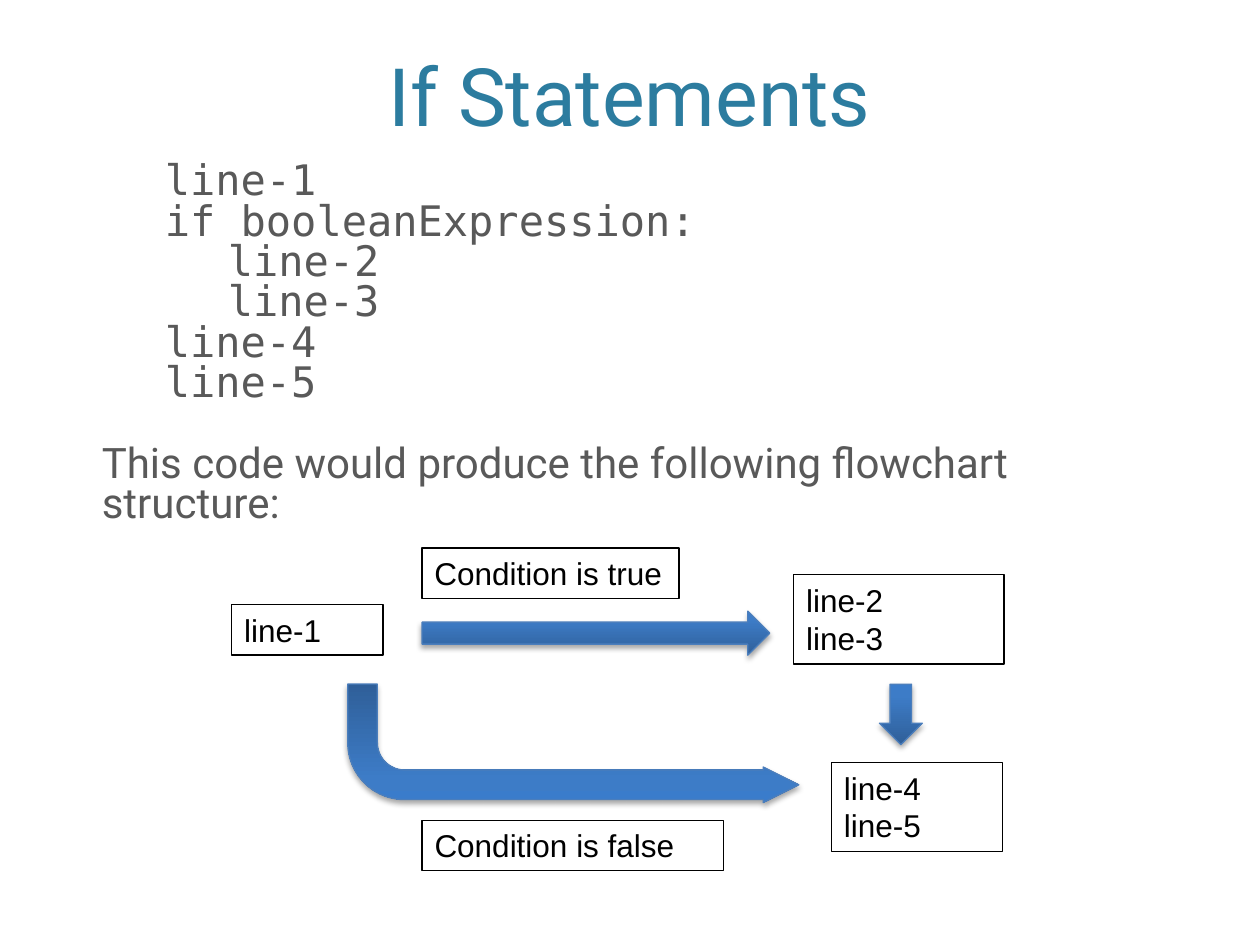
from dataclasses import dataclass

from lxml.etree import SubElement
from pptx import Presentation
from pptx.dml.color import RGBColor
from pptx.enum.shapes import MSO_SHAPE as Preset
from pptx.enum.text import MSO_ANCHOR as Anchor, MSO_AUTO_SIZE as AutoSize, PP_ALIGN as Align
from pptx.oxml import parse_xml
from pptx.oxml.ns import nsdecls, qn
from pptx.util import Inches, Pt

# Grid: 100 columns by 75 rows over the slide
WIDTH, HEIGHT = Inches(10), Inches(7.5)
COLUMN, ROW = WIDTH / 100, HEIGHT / 75

TEAL = RGBColor(0x2C, 0x7C, 0x9F)
GREY = RGBColor(0x59, 0x59, 0x59)
BLACK = RGBColor(0x00, 0x00, 0x00)
ARROW_EDGE = RGBColor(0x4B, 0x7E, 0xBC)
ARROW_STOPS = (
    (0, RGBColor(0x2F, 0x5F, 0x99)),
    (80, RGBColor(0x3D, 0x7C, 0xC7)),
    (100, RGBColor(0x3A, 0x7C, 0xCB)),
)
HEADING_FONT, CODE_FONT, LABEL_FONT = "Roboto", "DejaVu Sans Mono", "Arial"


@dataclass(frozen=True)
class Area:
    column: float
    row: float
    columns: float
    rows: float

    def lengths(self) -> tuple:
        return (round(self.column * COLUMN), round(self.row * ROW),
                round(self.columns * COLUMN), round(self.rows * ROW))


@dataclass(frozen=True)
class Step:
    area: Area
    lines: tuple


@dataclass(frozen=True)
class Arrow:
    area: Area
    preset: Preset
    adjustments: tuple = ()
    flipped: bool = False


TITLE_AREA = Area(6, 3.7, 87.9, 8.1)
BODY_AREA = Area(7.1, 12.5, 87.9, 47.5)
CODE = ("line-1", "if booleanExpression:", "\tline-2", "\tline-3", "line-4", "line-5")
CAPTION = "This code would produce the following flowchart structure:"

STEPS = (
    Step(Area(18.4, 48, 12, 4), ("line-1",)),
    Step(Area(33.5, 43.5, 20.4, 4), ("Condition is true",)),
    Step(Area(63, 45.6, 16.7, 7.1), ("line-2", "line-3")),
    Step(Area(33.5, 65.1, 23.9, 4), ("Condition is false",)),
    Step(Area(66, 60.5, 13.6, 7.1), ("line-4", "line-5")),
)
ARROWS = (
    Arrow(Area(33.5, 48.5, 27.6, 3.5), Preset.RIGHT_ARROW),
    Arrow(Area(27.6, 54.3, 35.8, 9.4), Preset.BENT_ARROW, (0.25, 0.15, 0.3, 0.48), True),
    Arrow(Area(69.8, 54.3, 3.4, 4.8), Preset.DOWN_ARROW),
)


def add_box(page, area: Area):
    box = page.shapes.add_textbox(*area.lengths())
    box.text_frame.word_wrap = True
    return box


def add_para(frame, text: str, font: str, size: float, color: RGBColor):
    """Fill the frame's empty first paragraph, or add another one."""
    first = frame.paragraphs[0]
    para = frame.add_paragraph() if first.runs else first
    span = para.add_run()
    span.text = text
    span.font.name, span.font.size = font, Pt(size)
    span.font.color.rgb = color
    return para


def draw_title(page) -> None:
    frame = add_box(page, TITLE_AREA).text_frame
    frame.vertical_anchor = Anchor.BOTTOM
    add_para(frame, "If Statements", HEADING_FONT, 46, TEAL).alignment = Align.CENTER


def draw_body(page) -> None:
    frame = add_box(page, BODY_AREA).text_frame
    for line in CODE:
        para = add_para(frame, line, CODE_FONT, 24, GREY)
        para.level = 1
        para.line_spacing = 0.8
        properties = para._p.get_or_add_pPr()
        properties.set("marL", str(round(5 * COLUMN)))
        properties.set("indent", "0")
    caption = add_para(frame, CAPTION, HEADING_FONT, 24, GREY)
    caption.line_spacing = 0.8
    caption.space_before = Pt(23)


def draw_step(page, step: Step) -> None:
    box = add_box(page, step.area)
    box.line.color.rgb = BLACK
    box.line.width = Pt(0.75)
    box.text_frame.auto_size = AutoSize.SHAPE_TO_FIT_TEXT
    for line in step.lines:
        add_para(box.text_frame, line, LABEL_FONT, 18, BLACK)


def draw_arrow(page, arrow: Arrow) -> None:
    shape = page.shapes.add_shape(arrow.preset, *arrow.area.lengths())
    for index, value in enumerate(arrow.adjustments):
        shape.adjustments[index] = value
    properties = shape._element.spPr
    if arrow.flipped:
        properties.find(qn("a:xfrm")).set("flipV", "1")

    # Gradient that runs from the bottom up
    stops = "".join(
        f'<a:gs pos="{share * 1000}"><a:srgbClr val="{color}"/></a:gs>'
        for share, color in ARROW_STOPS)
    properties.find(qn("a:prstGeom")).addnext(parse_xml(
        f'<a:gradFill {nsdecls("a")} rotWithShape="1"><a:gsLst>{stops}</a:gsLst>'
        '<a:lin ang="16200000" scaled="0"/></a:gradFill>'))
    shape.line.color.rgb = ARROW_EDGE
    shape.line.width = Pt(0.75)

    # Soft shadow straight below
    shape.shadow.inherit = False
    shadow = SubElement(
        properties.find(qn("a:effectLst")), qn("a:outerShdw"),
        blurRad=str(Pt(3.1)), dist=str(Pt(1.8)), dir="5400000", rotWithShape="0")
    color = SubElement(shadow, qn("a:srgbClr"), val=str(BLACK))
    SubElement(color, qn("a:alpha"), val="35000")


def main() -> None:
    deck = Presentation()
    deck.slide_width, deck.slide_height = WIDTH, HEIGHT
    page = deck.slides.add_slide(deck.slide_layouts[6])
    draw_title(page)
    draw_body(page)
    for step in STEPS:
        draw_step(page, step)
    for arrow in ARROWS:
        draw_arrow(page, arrow)
    deck.save("out.pptx")


if __name__ == "__main__":
    main()
